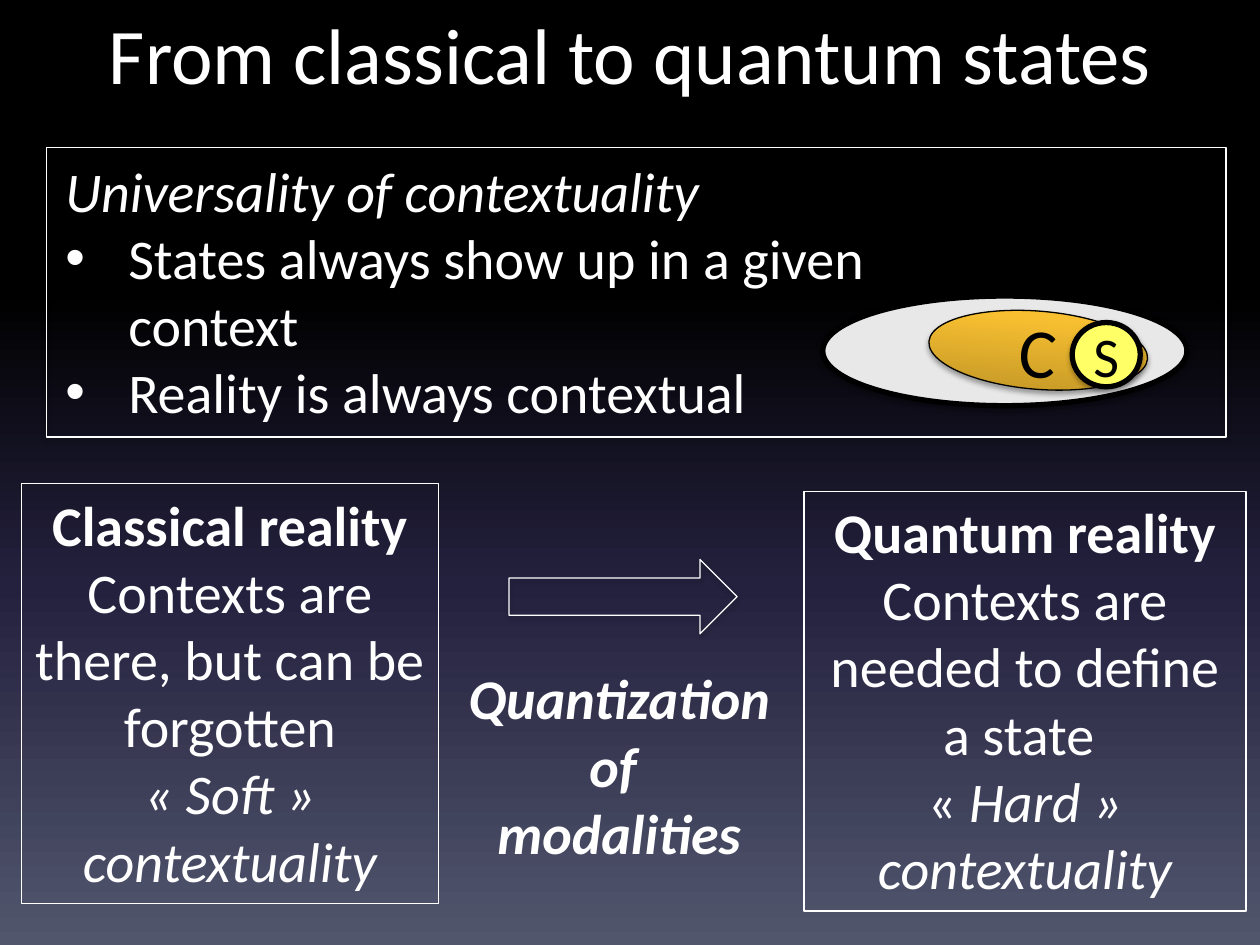
"""Build the slide on classical and quantum states."""
from copy import deepcopy

from lxml import etree
from pptx import Presentation
from pptx import util as u
from pptx.dml.color import RGBColor
from pptx.enum import shapes, text
from pptx.oxml.ns import qn

WHITE = RGBColor(255, 255, 255)
BLACK = RGBColor(0, 0, 0)
GREY = RGBColor(0xE8, 0xE8, 0xE8)
YELLOW = RGBColor(0xFF, 0xFF, 0x66)
NIGHT = [(0, BLACK), (0.31, BLACK), (0.62, RGBColor(0x24, 0x21, 0x3E)),
         (1, RGBColor(0x51, 0x56, 0x6D))]
GOLD = [(0, RGBColor(0xBF, 0x94, 0x26)), (0.8, RGBColor(0xF8, 0xC0, 0x31)),
        (1, RGBColor(0xFD, 0xC3, 0x2D))]
KIND = shapes.MSO_SHAPE
TOP, MID = text.MSO_ANCHOR.TOP, text.MSO_ANCHOR.MIDDLE
LEFT, MIDDLE = text.PP_ALIGN.LEFT, text.PP_ALIGN.CENTER
BASE = {"name": "Calibri", "size": u.Pt(32), "bold": False, "italic": False}
BOLD, SLANT = {"bold": True}, {"italic": True}


def shade(fill, root, stops, angle):
    """Fill with a linear gradient of any number of stops."""
    fill.gradient()
    fill.gradient_angle = angle
    group = next(root.iter(qn("a:gsLst")))
    for _ in stops[2:]:
        group.append(deepcopy(group[0]))
    for stop, (place, color) in zip(fill.gradient_stops, stops):
        stop.position = place
        stop.color.rgb = color


def cast(shape):
    """Give a shape a soft shadow below it."""
    effect = shape._element.spPr.find(qn("a:effectLst"))
    outer = etree.SubElement(effect, qn("a:outerShdw"), blurRad="39370",
                             dist="22860", dir="5400000", rotWithShape="0")
    color = etree.SubElement(outer, qn("a:srgbClr"), val="000000")
    etree.SubElement(color, qn("a:alpha"), val="35000")


def bullet(para):
    """Turn a paragraph into a hanging bullet."""
    props = para._p.get_or_add_pPr()
    props.set("marL", str(u.Inches(0.5)))
    props.set("indent", str(u.Inches(-0.5)))
    etree.SubElement(props, qn("a:buFont"), typeface="Arial")
    etree.SubElement(props, qn("a:buChar"), char="•")


def write(shape, paras, color=WHITE, align=MIDDLE, anchor=TOP, **frame):
    """Write paragraphs, each a list of runs with their format."""
    body = shape.text_frame
    for key, value in {"word_wrap": True, "vertical_anchor": anchor, **frame}.items():
        setattr(body, key, value)
    for num, runs in enumerate(paras):
        para = body.add_paragraph() if num else body.paragraphs[0]
        para.alignment = align
        for words, style in runs:
            run = para.add_run()
            run.text = words
            run.font.color.rgb = color
            for key, value in {**BASE, **style}.items():
                setattr(run.font, key, value)
    return body.paragraphs


def label(slide, area, paras, **style):
    """Add a text box."""
    box = slide.shapes.add_textbox(*map(u.Inches, area))
    return write(box, paras, **style)


def form(parent, kind, area, line=WHITE, width=0.75, fill=None, shadow=True):
    """Add an outlined shape, hollow unless a fill is given."""
    shape = parent.shapes.add_shape(kind, *map(u.Inches, area))
    shape.shadow.inherit = False
    shape.line.color.rgb = line
    shape.line.width = u.Pt(width)
    if fill is None:
        shape.fill.background()
    else:
        shape.fill.solid()
        shape.fill.fore_color.rgb = fill
    if shadow:
        cast(shape)
    return shape


def card(slide, area, head, claim, close):
    """Add a framed view of reality."""
    box = form(slide, KIND.RECTANGLE, area, shadow=False)
    write(box, [[(head, BOLD)], [(claim, {})], close])


def nest(slide):
    """Add the system S within its context C."""
    group = slide.shapes.add_group_shape()
    form(group, KIND.OVAL, (6.53, 2.35, 2.89, 0.87), BLACK, 3, GREY)
    inner = form(group, KIND.OVAL, (7.37, 2.47, 1.74, 0.62), BLACK, 0.75, GREY)
    shade(inner.fill, inner._element, GOLD, 90)
    inner.rotation = 4.6
    core = form(group, KIND.OVAL, (8.51, 2.56, 0.54, 0.51), BLACK, 3, YELLOW)
    tight = dict.fromkeys(
        ("margin_left", "margin_right", "margin_top", "margin_bottom"), 0)
    for shape, sign, size in ((inner, "C", 40), (core, "S", 32)):
        write(shape, [[(sign, {"size": u.Pt(size)})]], BLACK, anchor=MID,
              **{**tight, "word_wrap": False})


def main():
    """Build and save the slide."""
    deck = Presentation()
    deck.slide_width, deck.slide_height = u.Inches(10), u.Inches(7.5)
    slide = deck.slides.add_slide(deck.slide_layouts[6])
    shade(slide.background.fill, slide._element, NIGHT, 270)

    label(slide, (0.5, 0, 9, 1.25),
          [[("From classical to quantum states", {"size": u.Pt(45)})]])
    points = label(slide, (0.42, 1.19, 6.97, 2.26), [
        [("Universality of contextuality", SLANT)],
        [("States always show up in a given context", {})],
        [("Reality is always contextual", {})]], align=LEFT)
    for para in points[1:]:
        bullet(para)

    card(slide, (6.38, 3.9, 3.51, 3.33), "Quantum reality",
         "Contexts are needed to define a state ",
         [("« ", {}), ("Hard » contextuality", SLANT)])
    card(slide, (0.17, 3.84, 3.31, 3.33), "Classical reality",
         "Contexts are there, but can be forgotten",
         [("« Soft » contextuality", SLANT)])
    form(slide, KIND.RIGHT_ARROW, (4.04, 4.44, 1.81, 0.59))
    strong = {**BOLD, **SLANT}
    label(slide, (3.54, 5.22, 2.75, 1.72),
          [[("Quantization of ", strong)], [("modalities", strong)]])

    nest(slide)
    form(slide, KIND.RECTANGLE, (0.37, 1.17, 9.36, 2.3))
    deck.save("out.pptx")


if __name__ == "__main__":
    main()
